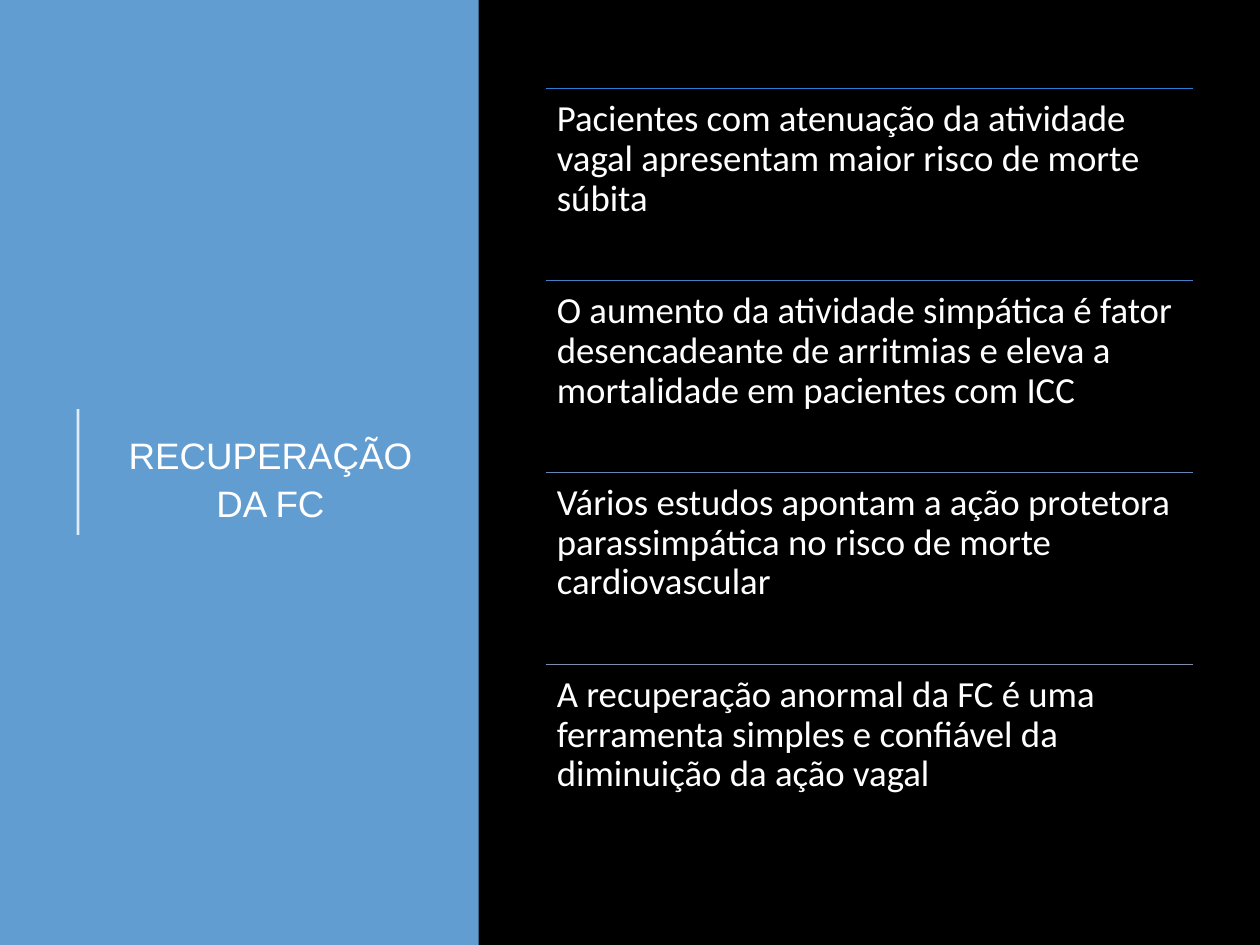
import pptx
import pptx.dml.color
import pptx.enum.shapes
import pptx.enum.text
import pptx.oxml.ns
import pptx.util
from lxml import etree

WIDTH, HEIGHT = pptx.util.Inches(10), pptx.util.Inches(7.5)
INSET = pptx.util.Inches(0.09)
ALIGN = pptx.enum.text.PP_ALIGN
ANCHOR = pptx.enum.text.MSO_ANCHOR

TITLE_FORMAT = {
    "frame": {"word_wrap": True, "vertical_anchor": ANCHOR.MIDDLE},
    "paragraph": {"alignment": ALIGN.CENTER, "line_spacing": 1.07},
    "font": {"name": "Arial", "size": pptx.util.Pt(21)},
}
ITEM_FORMAT = {
    "frame": {"word_wrap": True, "vertical_anchor": ANCHOR.TOP,
              "margin_left": INSET, "margin_right": INSET,
              "margin_top": INSET, "margin_bottom": INSET},
    "paragraph": {"alignment": ALIGN.LEFT, "line_spacing": 0.9},
    "font": {"name": "Calibri", "size": pptx.util.Pt(21)},
}
ITEMS = [
    ("297FD5", "Pacientes com atenuação da atividade vagal apresentam maior risco de morte súbita"),
    ("4781C5", "O aumento da atividade simpática é fator desencadeante de arritmias "
               "e eleva a mortalidade em pacientes com ICC"),
    ("6487B6", "Vários estudos apontam a ação protetora parassimpática no risco de morte cardiovascular"),
    ("7F8FA9", "A recuperação anormal da FC é uma ferramenta simples e confiável da diminuição da ação vagal"),
]


def color(value):
    return pptx.dml.color.RGBColor.from_string(value)


def share(box, left, top, width, height):
    x, y, w, h = box
    return (round(x + left * w), round(y + top * h), round(width * w), round(height * h))


def apply_format(target, values):
    for name, value in values.items():
        setattr(target, name, value)


def add_text(shapes, box, text, text_format):
    frame = shapes.add_textbox(*box).text_frame
    apply_format(frame, text_format["frame"])
    paragraph = frame.paragraphs[0]
    apply_format(paragraph, text_format["paragraph"])
    run = paragraph.add_run()
    run.text = text
    apply_format(run.font, text_format["font"])
    run.font.color.rgb = color("FFFFFF")


def add_line(shapes, box, line_color, points, opacity=100):
    left, top, width, height = box
    line = shapes.add_connector(pptx.enum.shapes.MSO_CONNECTOR.STRAIGHT,
                                left, top, left + width, top + height)
    line.line.color.rgb = color(line_color)
    line.line.width = pptx.util.Pt(points)
    properties = line._element.spPr
    if opacity < 100:
        fill_color = properties.find(".//" + pptx.oxml.ns.qn("a:srgbClr"))
        etree.SubElement(fill_color, pptx.oxml.ns.qn("a:alpha"), val=str(opacity * 1000))
    etree.SubElement(properties, pptx.oxml.ns.qn("a:effectLst"))


def add_title_panel(slide, box):
    panel = slide.shapes.add_shape(pptx.enum.shapes.MSO_SHAPE.RECTANGLE, *box)
    panel.shadow.inherit = False
    panel.fill.solid()
    panel.fill.fore_color.rgb = color("629DD1")
    panel.line.fill.background()
    add_text(slide.shapes, share(box, 0.2, 0.1, 0.73, 0.81), "RECUPERAÇÃO DA FC", TITLE_FORMAT)
    add_line(slide.shapes, share(box, 0.163, 0.433, 0, 0.133), "FFFFFF", 1.5, opacity=80)


def add_item_list(slide, box):
    group = slide.shapes.add_group_shape()
    row_height = 1 / len(ITEMS)
    for row, (line_color, text) in enumerate(ITEMS):
        top = row * row_height
        add_line(group.shapes, share(box, 0, top, 1, 0), line_color, 0.75)
        add_text(group.shapes, share(box, 0, top, 1, row_height), text, ITEM_FORMAT)


def main():
    presentation = pptx.Presentation()
    apply_format(presentation, {"slide_width": WIDTH, "slide_height": HEIGHT})
    slide = presentation.slides.add_slide(presentation.slide_layouts[6])
    slide.background.fill.solid()
    slide.background.fill.fore_color.rgb = color("000000")
    page = (0, 0, WIDTH, HEIGHT)
    add_title_panel(slide, share(page, 0, 0, 0.38, 1))
    add_item_list(slide, share(page, 0.433, 0.094, 0.514, 0.812))
    presentation.save("out.pptx")


if __name__ == "__main__":
    main()
